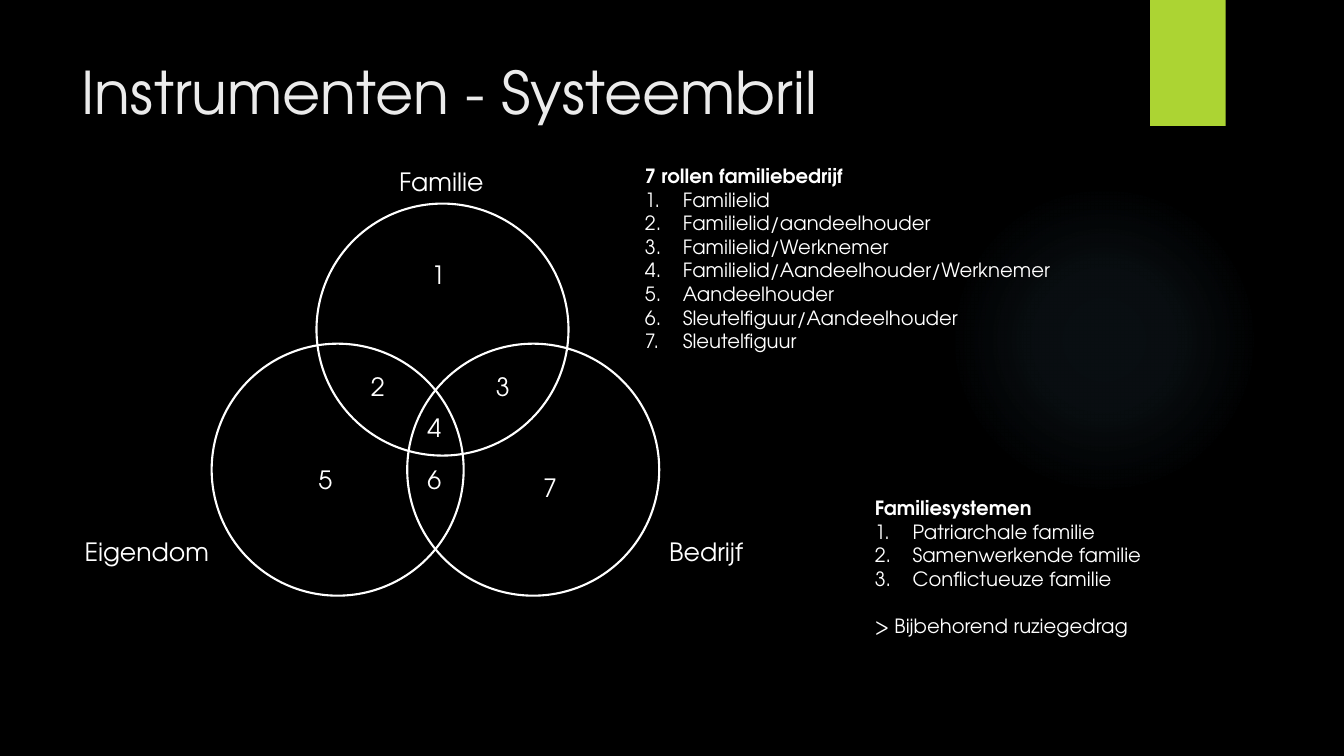
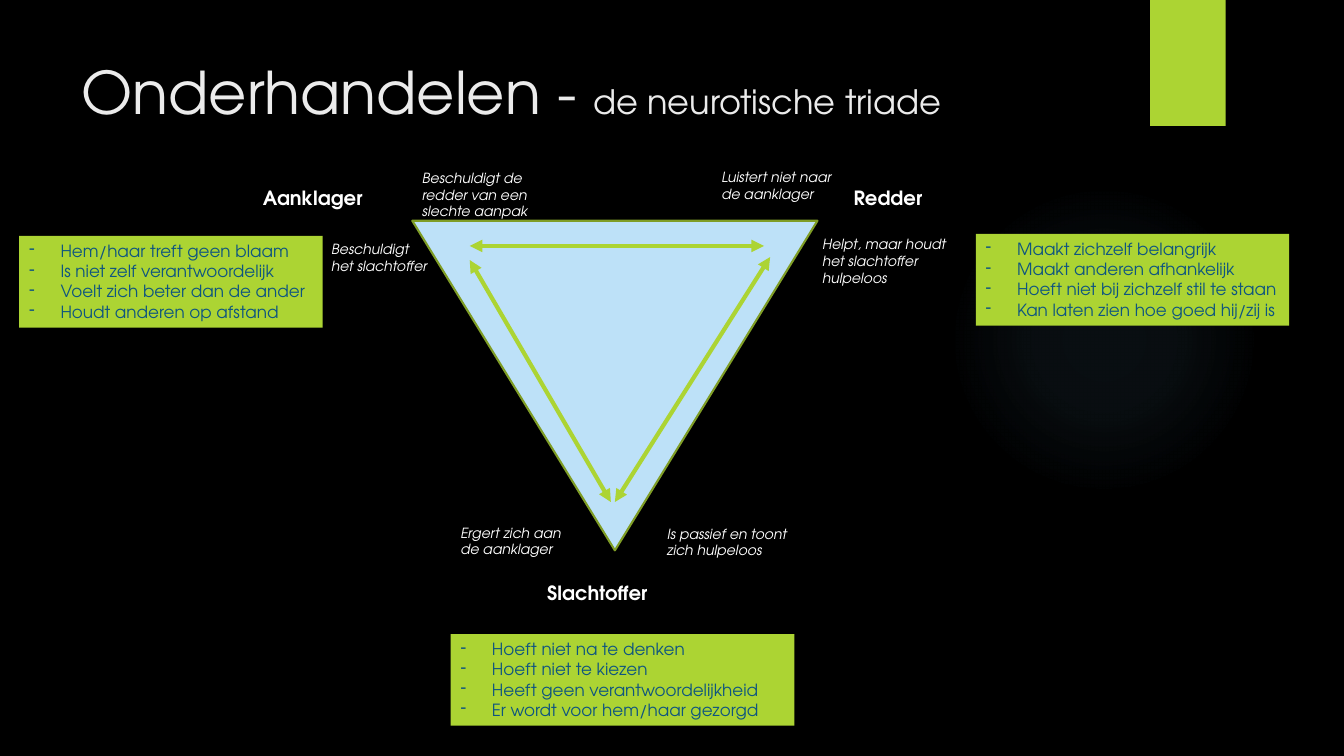
"""Two slides on family business: the systems lens and the neurotic triad."""
import dataclasses

import lxml.etree
import pptx
import pptx.dml.color
import pptx.enum.shapes
import pptx.enum.text
import pptx.oxml
import pptx.oxml.ns
import pptx.util

SHAPE = pptx.enum.shapes.MSO_SHAPE
RGB = pptx.dml.color.RGBColor.from_string
qn = pptx.oxml.ns.qn


@dataclasses.dataclass(frozen=True)
class Theme:
    font: str = "TeX Gyre Adventor"
    background: str = "000000"
    title: str = "EBEBEB"
    text: str = "FFFFFF"
    accent: str = "ACD433"
    accent_edge: str = "7F9D26"
    triangle: str = "BDE1F8"
    glow: str = "7AC4F0"
    gain: str = "0E5580"
    title_size: int = 42
    subtitle_size: int = 24
    label_size: int = 18
    body_size: int = 14
    gain_size: int = 12
    remark_size: int = 10


theme = Theme()
cell = pptx.util.Inches(0.1)
columns, rows = 133.33, 75


def spot(*grid_lengths):
    return [round(length * cell) for length in grid_lengths]


def write(holder, text, size=theme.body_size, color=theme.text, bold=False, italic=False,
          bullet=None, indent=0, before=0, same_line=False):
    frame = holder.text_frame
    frame.word_wrap = True
    frame.auto_size = pptx.enum.text.MSO_AUTO_SIZE.NONE
    frame.vertical_anchor = pptx.enum.text.MSO_ANCHOR.TOP
    paragraph = frame.paragraphs[-1]
    if paragraph.runs and not same_line:
        paragraph = frame.add_paragraph()
    paragraph.alignment = pptx.enum.text.PP_ALIGN.LEFT
    if before:
        paragraph.space_before = pptx.util.Pt(before)
    if bullet:
        properties = paragraph._p.get_or_add_pPr()
        margin = spot(indent)[0]
        properties.set("marL", str(margin))
        properties.set("indent", str(-margin))
        if bullet == "1.":
            lxml.etree.SubElement(properties, qn("a:buAutoNum"), type="arabicPeriod")
        else:
            lxml.etree.SubElement(properties, qn("a:buChar"), char=bullet)
    run = paragraph.add_run()
    run.text = text
    run.font.name = theme.font
    run.font.size = pptx.util.Pt(size)
    run.font.bold = bold
    run.font.italic = italic
    run.font.color.rgb = RGB(color)


deck = pptx.Presentation()
deck.slide_width, deck.slide_height = spot(columns, rows)
backdrop = deck.slide_master.background.fill
backdrop.solid()
backdrop.fore_color.rgb = RGB(theme.background)
layout = deck.slide_layouts.get_by_name("Title Only")

lens = deck.slides.add_slide(layout)
triad = deck.slides.add_slide(layout)

glow = lens.shapes.add_shape(SHAPE.OVAL, *spot(94.1, 18.3, 30.8, 30.8))
band = lens.shapes.add_shape(SHAPE.RECTANGLE, *spot(114.1, 0, 7.5, 12.5))
band.fill.solid()
band.fill.fore_color.rgb = RGB(theme.accent)
glow.fill.background()
stops = "".join(
    f'<a:gs pos="{place * 1000}"><a:srgbClr val="{theme.glow}">'
    f'<a:alpha val="{opacity * 1000}"/></a:srgbClr></a:gs>'
    for place, opacity in ((0, 7), (36, 6), (69, 0)))
gradient = pptx.oxml.parse_xml(
    f'<a:gradFill {pptx.oxml.ns.nsdecls("a")} rotWithShape="1"><a:gsLst>{stops}</a:gsLst>'
    '<a:path path="circle"><a:fillToRect l="50000" t="50000" r="50000" b="50000"/></a:path>'
    '</a:gradFill>')
glow_properties = glow.element.spPr
glow_properties.replace(glow_properties.find(qn("a:noFill")), gradient)
for position, decoration in enumerate((glow, band), start=2):
    decoration.line.fill.background()
    decoration.shadow.inherit = False
    layout.shapes.element.insert(position, decoration.element)

for slide, heading, subheading in (
        (lens, "Instrumenten - Systeembril", None),
        (triad, "Onderhandelen - ", "de neurotische triade")):
    title = slide.shapes.title
    title.left, title.top, title.width, title.height = spot(7.1, 5, 102.9, 15.3)
    write(title, heading, size=theme.title_size, color=theme.title)
    if subheading:
        write(title, subheading, size=theme.subtitle_size, color=theme.title, same_line=True)

for left, top in ((31.4, 20.2), (21, 34.1), (40.4, 34.1)):
    system = lens.shapes.add_shape(SHAPE.OVAL, *spot(left, top, 25, 25))
    system.fill.background()
    system.line.color.rgb = RGB(theme.text)
    system.line.width = pptx.util.Pt(1.5)
    system.shadow.inherit = False

for name, left, top, width in (
        ("Familie", 38.6, 16, 17.8), ("Eigendom", 7.4, 52.7, 17.8), ("Bedrijf", 65.4, 52.7, 17.8),
        ("1", 41.8, 25.2, 4.2), ("2", 35.8, 36.3, 4.2), ("3", 48.2, 36.3, 4.2),
        ("4", 41.4, 40.4, 4.2), ("5", 30.6, 45.6, 4.2), ("6", 41.4, 45.6, 4.2),
        ("7", 52.9, 46.4, 4.2)):
    write(lens.shapes.add_textbox(*spot(left, top, width, 4)), name, size=theme.label_size)

for heading, items, closing, box in (
        ("7 rollen familiebedrijf",
         ("Familielid", "Familielid/aandeelhouder", "Familielid/Werknemer",
          "Familielid/Aandeelhouder/Werknemer", "Aandeelhouder",
          "Sleutelfiguur/Aandeelhouder", "Sleutelfiguur"),
         None, (63, 15.8, 66.7, 19.9)),
        ("Familiesystemen",
         ("Patriarchale familie", "Samenwerkende familie", "Conflictueuze familie"),
         "> Bijbehorend ruziegedrag", (85.8, 48.7, 44, 15.1))):
    overview = lens.shapes.add_textbox(*spot(*box))
    write(overview, heading, bold=True)
    for item in items:
        write(overview, item, bullet="1.", indent=3.75)
    if closing:
        write(overview, closing, before=16.8)

triangle = triad.shapes.add_shape(SHAPE.ISOSCELES_TRIANGLE, *spot(40.9, 21.9, 40.2, 32.7))
triangle.rotation = 180
triangle.fill.solid()
triangle.fill.fore_color.rgb = RGB(theme.triangle)
triangle.line.color.rgb = RGB(theme.accent_edge)
triangle.line.width = pptx.util.Pt(1.5)
triangle.shadow.inherit = False

for role, left, top, width in (
        ("Aanklager", 25.1, 18, 12.7), ("Slachtoffer", 53.3, 57.1, 12.8),
        ("Redder", 83.7, 18, 9.3)):
    write(triad.shapes.add_textbox(*spot(left, top, width, 3.4)), role, bold=True)

for remark, *box in (
        ("Beschuldigt het slachtoffer", 31.9, 23.4, 11.7, 4.4),
        ("Helpt, maar houdt het slachtoffer hulpeloos", 80.6, 22.9, 15.4, 6.1),
        ("Beschuldigt de redder van een slechte aanpak", 40.9, 16.3, 15, 6.1),
        ("Ergert zich aan de aanklager", 44.7, 51.5, 12.8, 4.4),
        ("Is passief en toont zich hulpeloos", 65.2, 51.6, 14.9, 4.4),
        ("Luistert niet naar de aanklager", 70.6, 16.2, 14, 4.4)):
    write(triad.shapes.add_textbox(*spot(*box)), remark, size=theme.remark_size, italic=True)

for left, top, width, gains in (
        (1.9, 23.4, 30.1,
         ("Hem/haar treft geen blaam", "Is niet zelf verantwoordelijk",
          "Voelt zich beter dan de ander", "Houdt anderen op afstand")),
        (96.8, 23.2, 31.1,
         ("Maakt zichzelf belangrijk", "Maakt anderen afhankelijk",
          "Hoeft niet bij zichzelf stil te staan", "Kan laten zien hoe goed hij/zij is")),
        (44.7, 62.9, 34.1,
         ("Hoeft niet na te denken", "Hoeft niet te kiezen",
          "Heeft geen verantwoordelijkheid", "Er wordt voor hem/haar gezorgd"))):
    payoff = triad.shapes.add_shape(SHAPE.RECTANGLE, *spot(left, top, width, 9.1))
    payoff.fill.solid()
    payoff.fill.fore_color.rgb = RGB(theme.accent)
    payoff.line.fill.background()
    payoff.shadow.inherit = False
    for gain in gains:
        write(payoff, gain, size=theme.gain_size, color=theme.gain, bullet="-", indent=3.12)

for ends in ((46.6, 24.4, 75.8, 24.4), (76.4, 25.5, 61, 49.8), (46.6, 25.8, 60.6, 49.8)):
    interplay = triad.shapes.add_connector(pptx.enum.shapes.MSO_CONNECTOR.STRAIGHT, *spot(*ends))
    interplay.line.color.rgb = RGB(theme.accent)
    interplay.line.width = pptx.util.Pt(3)
    stroke = interplay.element.spPr.find(qn("a:ln"))
    for tip in ("a:headEnd", "a:tailEnd"):
        lxml.etree.SubElement(stroke, qn(tip), type="triangle")
    lxml.etree.SubElement(interplay.element.spPr, qn("a:effectLst"))

deck.save("out.pptx")
